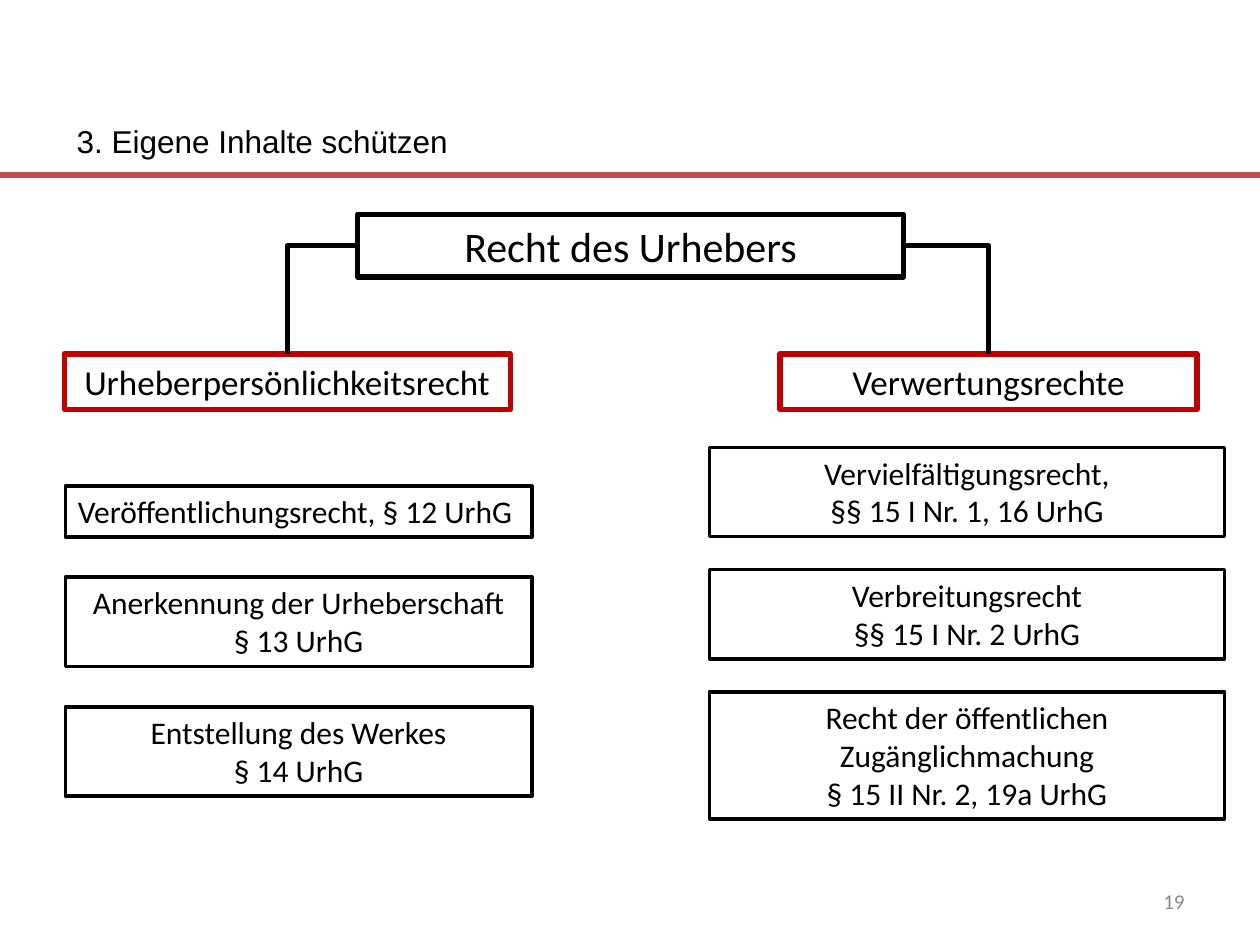
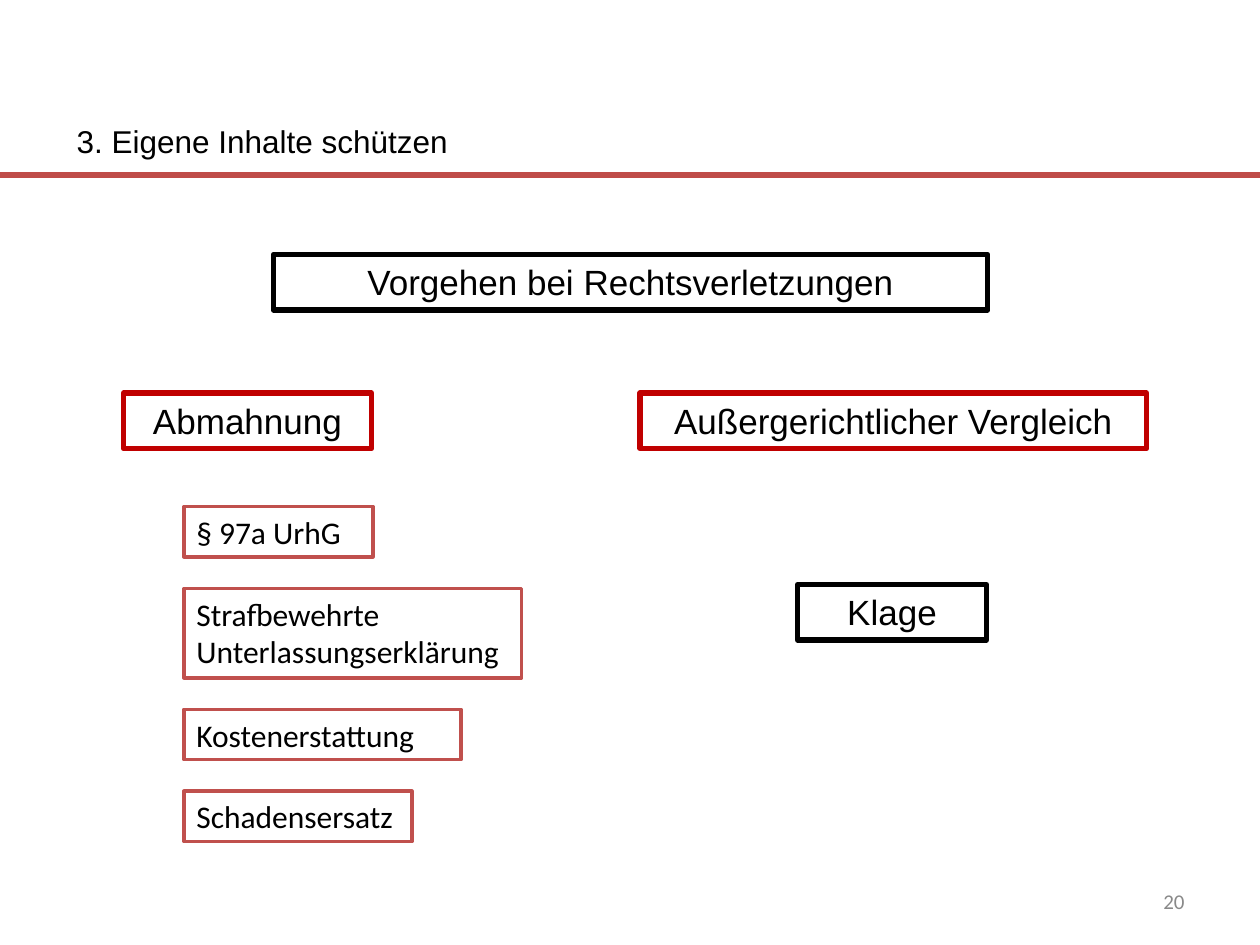
from dataclasses import dataclass

from lxml import etree
from pptx import Presentation
from pptx import util as u
from pptx.dml.color import RGBColor
from pptx.enum import shapes, text
from pptx.oxml import ns


@dataclass(frozen=True)
class Theme:
    ink: str = "000000"
    paper: str = "FFFFFF"
    red: str = "C00000"
    rose: str = "C0504D"
    rule: str = "BF4C48"
    grey: str = "898989"
    sans: str = "Arial"
    body: str = "Calibri"
    top: int = 24
    head: int = 20
    item: int = 18
    foot: int = 12
    thick: float = 3
    mid: float = 2.25
    thin: float = 2


T = Theme()
LEFT, MID, RIGHT = text.PP_ALIGN.LEFT, text.PP_ALIGN.CENTER, text.PP_ALIGN.RIGHT
HIGH = {1: 0.4, 2: 0.71, 3: 1.01}


def inch(*sizes):
    return [u.Inches(size) for size in sizes]


def paint(line, color, width):
    line.color.rgb = RGBColor.from_string(color)
    line.width = u.Pt(width)


def write(shape, lines, size, font, color=T.ink, align=LEFT):
    frame = shape.text_frame
    frame.word_wrap = True
    for row, words in enumerate(lines):
        para = frame.add_paragraph() if row else frame.paragraphs[0]
        para.alignment = align
        run = para.add_run()
        run.text = words
        run.font.size = u.Pt(size)
        run.font.name = font
        run.font.color.rgb = RGBColor.from_string(color)
    return frame


def card(slide, box, lines, size, font, edge, width, align=MID, fill=True):
    shape = slide.shapes.add_shape(shapes.MSO_SHAPE.RECTANGLE, *inch(*box))
    shape.shadow.inherit = False
    if fill:
        shape.fill.solid()
        shape.fill.fore_color.rgb = RGBColor.from_string(T.paper)
    else:
        shape.fill.background()
    paint(shape.line, edge, width)
    frame = write(shape, lines, size, font, align=align)
    frame.vertical_anchor = text.MSO_ANCHOR.TOP
    frame.auto_size = text.MSO_AUTO_SIZE.SHAPE_TO_FIT_TEXT
    return shape


def wire(slide, kind, ends, color):
    line = slide.shapes.add_connector(kind, *inch(*ends))
    paint(line.line, color, T.thick)
    etree.SubElement(line._element.spPr, ns.qn("a:effectLst"))
    return line


def bend(slide, start, site, end):
    line = wire(slide, shapes.MSO_CONNECTOR.ELBOW, (0, 0, 0, 0), T.ink)
    line.begin_connect(start, site)
    line.end_connect(end, 0)
    line._element.spPr.find(ns.qn("a:prstGeom")).set("prst", "bentConnector2")


def stack(slide, box, gap, items, edge, width):
    left, top, wide = box
    for lines, rows, span, align in items:
        card(slide, (left, top, span or wide, HIGH[rows]), lines,
             T.item, T.body, edge, width, align)
        top += HIGH[rows] + gap


def base(deck, number):
    slide = deck.slides.add_slide(deck.slide_layouts[6])
    wire(slide, shapes.MSO_CONNECTOR.STRAIGHT, (0, 1.39, 10, 1.39), T.rule)
    title = slide.shapes.add_textbox(*inch(0.51, 0.92, 3.7, 0.4))
    write(title, ["3. Eigene Inhalte schützen"], T.item, T.sans)
    foot = slide.shapes.add_textbox(*inch(7.17, 6.95, 2.33, 0.4))
    frame = write(foot, [str(number)], T.foot, T.body, T.grey, RIGHT)
    frame.vertical_anchor = text.MSO_ANCHOR.MIDDLE
    return slide


def rights(slide, box):
    x, y = box
    root = card(slide, (x + 2.33, y, 4.33, 0.5), ["Recht des Urhebers"],
                T.top, T.body, T.ink, T.thick)
    heads = (("Urheberpersönlichkeitsrecht", 0, 3.54, 1),
             ("Verwertungsrechte", 5.68, 3.31, 3))
    for name, left, wide, site in heads:
        head = card(slide, (x + left, y + 1.11, wide, 0.44), [name],
                    T.head, T.body, T.red, T.thick)
        bend(slide, root, site, head)
    stack(slide, (x + 0.01, y + 2.16, 3.7), 0.32, (
        (["Veröffentlichungsrecht, § 12 UrhG"], 1, None, LEFT),
        (["Anerkennung der Urheberschaft", "§ 13 UrhG"], 2, None, MID),
        (["Entstellung des Werkes", "§ 14 UrhG"], 2, None, MID),
    ), T.ink, T.mid)
    stack(slide, (x + 5.12, y + 1.85, 4.09), 0.26, (
        (["Vervielfältigungsrecht,", "§§ 15 I Nr. 1, 16 UrhG"], 2, None, MID),
        (["Verbreitungsrecht", "§§ 15 I Nr. 2 UrhG"], 2, None, MID),
        (["Recht der öffentlichen Zugänglichmachung",
          "§ 15 II Nr. 2, 19a UrhG"], 3, None, MID),
    ), T.ink, T.thin)


def steps(slide, box):
    x, y = box
    heads = (
        ("Vorgehen bei Rechtsverletzungen", 1.19, 0, 5.67, T.ink),
        ("Abmahnung", 0, 1.1, 1.97, T.red),
        ("Außergerichtlicher Vergleich", 4.1, 1.1, 4.02, T.red),
        ("Klage", 5.35, 2.62, 1.5, T.ink),
    )
    for name, left, top, wide, edge in heads:
        card(slide, (x + left, y + top, wide, 0.44), [name],
             T.head, T.sans, edge, T.thick, fill=False)
    stack(slide, (x + 0.48, y + 2, None), 0.25, (
        (["§ 97a UrhG"], 1, 1.5, LEFT),
        (["Strafbewehrte Unterlassungserklärung"], 2, 2.68, LEFT),
        (["Kostenerstattung"], 1, 2.2, LEFT),
        (["Schadensersatz"], 1, 1.81, LEFT),
    ), T.rose, T.thin)


def main():
    deck = Presentation()
    deck.slide_width, deck.slide_height = inch(10, 7.5)
    rights(base(deck, 19), (0.51, 1.7))
    steps(base(deck, 20), (0.98, 2.02))
    deck.save("out.pptx")


if __name__ == "__main__":
    main()
